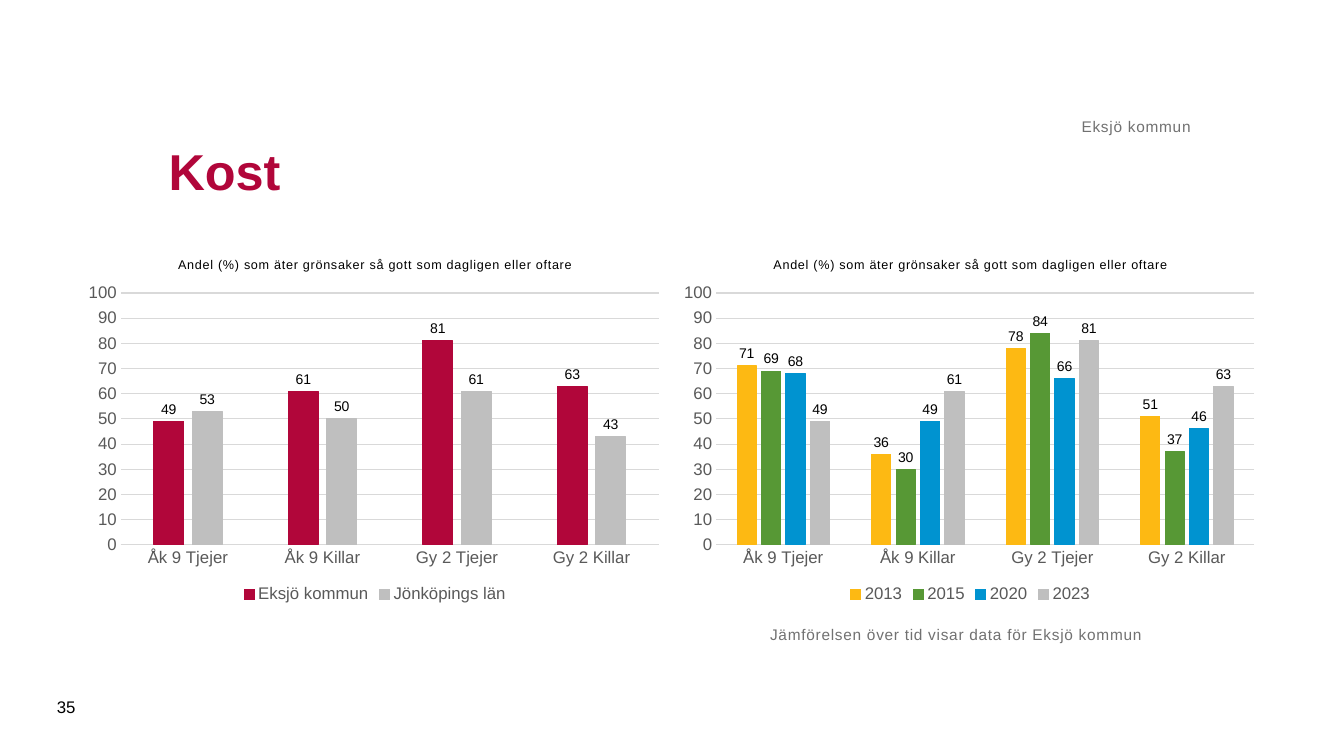
from pptx import Presentation
from pptx.chart.data import CategoryChartData
from pptx.dml.color import RGBColor
from pptx.enum.chart import XL_CHART_TYPE, XL_LABEL_POSITION, XL_LEGEND_POSITION, XL_TICK_MARK
from pptx.enum.text import MSO_ANCHOR, PP_ALIGN
from pptx.oxml import parse_xml
from pptx.oxml.ns import nsdecls, qn
from pptx.util import Inches, Pt

THEME = {
    "font": "Arial", "red": "B1063A", "gray": "BFBFBF", "gold": "FDB913",
    "green": "579835", "blue": "0093D0", "grid": "D9D9D9",
    "axis": "595959", "soft": "717171", "ink": "000000",
    "head": 36, "body": 12, "note": 11, "label": 10, "small": 9, "track": "50",
}
NUMBER = "#,##0;#,##0"

deck = Presentation()
deck.slide_width, deck.slide_height = Inches(13.33), Inches(7.5)
slide = deck.slides.add_slide(deck.slide_layouts[6])


def place(left, top, width, height):
    """Turn percentages of the slide into lengths."""
    wide, high = deck.slide_width, deck.slide_height
    return [int(share * side / 100) for share, side in
            ((left, wide), (top, high), (width, wide), (height, high))]


def style(font, size, color, bold=False):
    for name, value in {"name": THEME["font"], "size": Pt(THEME[size]), "bold": bold}.items():
        setattr(font, name, value)
    font.color.rgb = RGBColor.from_string(THEME[color])


# Charts
groups = ["Åk 9 Tjejer", "Åk 9 Killar", "Gy 2 Tjejer", "Gy 2 Killar"]
charts = [
    [("Eksjö kommun", "red", (49, 61, 81, 63)),
     ("Jönköpings län", "gray", (53, 50, 61, 43))],
    [("2013", "gold", (71, 36, 78, 51)),
     ("2015", "green", (69, 30, 84, 37)),
     ("2020", "blue", (68, 49, 66, 46)),
     ("2023", "gray", (49, 61, 81, 63))],
]
frame = {"x": 0.07, "y": 0.14, "w": 0.91, "h": 0.69}
layout = "".join(f'<c:{key} val="{val}"/>' for key, val in frame.items())

for col, rows in enumerate(charts):
    data = CategoryChartData(number_format=NUMBER)
    data.categories = groups
    for name, color, values in rows:
        data.add_series(name, values)
    chart = slide.shapes.add_chart(
        XL_CHART_TYPE.COLUMN_CLUSTERED, *place(5.9 + 44.3 * col, 32, 44, 48.3), data).chart
    style(chart.font, "label", "ink")

    title = chart.chart_title
    title.include_in_layout = False
    run = title.text_frame.paragraphs[0].add_run()
    run.text = "Andel (%) som äter grönsaker så gott som dagligen eller oftare"
    style(run.font, "small", "ink")
    run._r.get_or_add_rPr().set("spc", THEME["track"])

    area = chart._chartSpace.chart.plotArea
    for old in area.findall(qn("c:layout")):
        area.remove(old)
    area.insert(0, parse_xml(
        f'<c:layout {nsdecls("c")}><c:manualLayout><c:layoutTarget val="inner"/>'
        f'<c:xMode val="edge"/><c:yMode val="edge"/>{layout}</c:manualLayout></c:layout>'))

    chart.has_legend = True
    chart.legend.position = XL_LEGEND_POSITION.BOTTOM
    chart.legend.include_in_layout = False
    style(chart.legend.font, "body", "axis")

    cats, vals = chart.category_axis, chart.value_axis
    for axis in (cats, vals):
        axis.major_tick_mark = axis.minor_tick_mark = XL_TICK_MARK.NONE
        style(axis.tick_labels.font, "body", "axis")
    vals.minimum_scale, vals.maximum_scale, vals.major_unit = 0, 100, 10
    vals.tick_labels.number_format = NUMBER
    vals.tick_labels.number_format_is_linked = False
    vals.format.line.fill.background()
    for line in (cats.format.line, vals.major_gridlines.format.line):
        line.color.rgb = RGBColor.from_string(THEME["grid"])
        line.width = Pt(0.75)

    plot = chart.plots[0]
    plot.gap_width, plot.overlap, plot.vary_by_categories = 219, -27, False
    for series, (name, color, values) in zip(plot.series, rows):
        tone = RGBColor.from_string(THEME[color])
        series.format.fill.solid()
        series.format.fill.fore_color.rgb = tone
        series.format.line.color.rgb = tone
        series.format.line.width = Pt(0.75)
        labels = series.data_labels
        for key, value in {"show_value": True, "position": XL_LABEL_POSITION.OUTSIDE_END,
                           "number_format": NUMBER, "number_format_is_linked": False}.items():
            setattr(labels, key, value)
        style(labels.font, "label", "ink")

# Text: words, box, size, color, anchor, alignment, plain (no inset, tracked)
top, mid, low = MSO_ANCHOR.TOP, MSO_ANCHOR.MIDDLE, MSO_ANCHOR.BOTTOM
left, right = PP_ALIGN.LEFT, PP_ALIGN.RIGHT
texts = [
    ("Kost", (11.8, 13.1, 76.8, 18.9), "head", "red", mid, left, False),
    ("Jämförelsen över tid visar data för Eksjö kommun",
     (57.3, 82.7, 39.8, 12.5), "note", "soft", top, left, True),
    ("Eksjö kommun", (11.8, 8.3, 76.8, 9.7), "note", "soft", low, right, True),
    ("35", (3.5, 90.8, 4.3, 5.3), "body", "ink", mid, left, False),
]
for words, box, size, color, anchor, align, plain in texts:
    body = slide.shapes.add_textbox(*place(*box)).text_frame
    body.word_wrap, body.vertical_anchor = True, anchor
    para = body.paragraphs[0]
    para.alignment = align
    run = para.add_run()
    run.text = words
    style(run.font, size, color, size == "head")
    if plain:
        for side in ("left", "top", "right", "bottom"):
            setattr(body, f"margin_{side}", 0)
        run._r.get_or_add_rPr().set("spc", THEME["track"])

deck.save("out.pptx")
